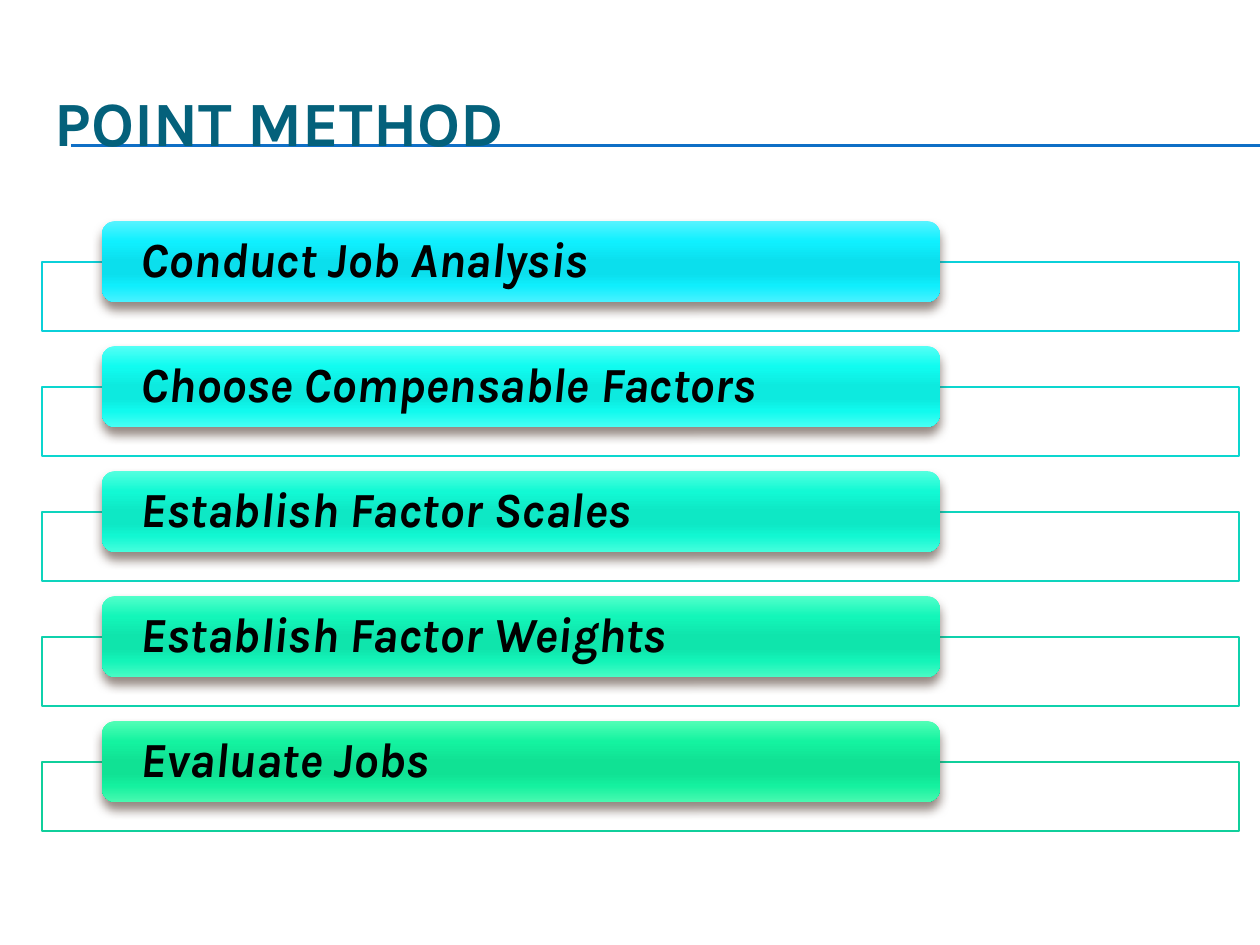
from lxml import etree
from pptx import Presentation, util as u
from pptx.dml.color import RGBColor
from pptx.enum import shapes, text
from pptx.oxml import parse_xml
from pptx.oxml.ns import nsdecls, qn


def px(*nums):
    return [u.Emu(round(n * 914400 / 126)) for n in nums]


def hue(code):
    return RGBColor.from_string(code)


prs = Presentation()
prs.slide_width, prs.slide_height = px(1260, 945)
slide = prs.slides.add_slide(prs.slide_layouts[5])
items = slide.shapes

# Double rule under the title
for y in (145, 146):
    rule = items.add_connector(shapes.MSO_CONNECTOR.STRAIGHT, *px(71, y, 1260, y))
    rule.line.color.rgb = hue("0F6FC6")
    rule.line.width = u.Pt(0.75)
    etree.SubElement(rule._element.spPr, qn("a:effectLst"))

# Title, in front of the rule
title = items.title
title.left, title.top, title.width, title.height = px(42, 63, 1197, 116)
title.text_frame.text = "POINT METHOD"
title.text_frame.vertical_anchor = text.MSO_ANCHOR.MIDDLE
para = title.text_frame.paragraphs[0]
para.alignment = text.PP_ALIGN.LEFT
for key, val in {"name": "Karla", "size": u.Pt(36), "bold": True}.items():
    setattr(para.font, key, val)
para.font.color.rgb = hue("04617B")
items._spTree.append(title._element)

# Steps: label, frame colour, colours of the bar's gradient
stops = (0, 25, 50, 65, 80, 100)
steps = [
    ("Conduct Job Analysis", "0BD0D9", "57F3FF 0FF0FF 0BDFED 0BDFED 0FEEFD 49F2FF"),
    ("Choose Compensable Factors", "0CD6CF", "55FFF5 10FCF0 0DEADF 0DEADF 10FAEE 47FFF4"),
    ("Establish Factor Scales", "0ED4BD", "54FFDF 12F9D4 0EE8C5 0EE8C5 11F7D2 46FEDD"),
    ("Establish Factor Weights", "0FD1AC", "52FFCA 13F6B9 0FE5AC 0FE5AC 13F4B8 48FBC5"),
    ("Evaluate Jobs", "10CF9B", "52FEB6 14F3A0 10E294 10E294 14F19F 49F9B0"),
]
style = {"name": "Karla", "size": u.Pt(28), "bold": True, "italic": True}

for row, (label, edge, shades) in enumerate(steps):
    top = 221 + 125 * row

    # Outlined frame behind the bar
    frame = items.add_shape(shapes.MSO_SHAPE.RECTANGLE, *px(42, top + 41, 1197, 69))
    frame.shadow.inherit = False
    frame.fill.solid()
    frame.fill.fore_color.rgb = hue("FFFFFF")
    frame.line.color.rgb = hue(edge)
    frame.line.width = u.Pt(0.79)

    # Glossy bar with a soft shadow
    bar = items.add_shape(shapes.MSO_SHAPE.ROUNDED_RECTANGLE, *px(102, top, 838, 81))
    bar.line.fill.background()
    marks = "".join(
        f'<a:gs pos="{pos * 1000}"><a:srgbClr val="{shade}"/></a:gs>'
        for pos, shade in zip(stops, shades.split()))
    props = bar._element.spPr
    props.find(qn("a:prstGeom")).addnext(parse_xml(
        f'<a:gradFill {nsdecls("a")} rotWithShape="1"><a:gsLst>{marks}</a:gsLst>'
        '<a:lin ang="5400000" scaled="0"/></a:gradFill>'))
    props.append(parse_xml(
        f'<a:effectLst {nsdecls("a")}><a:outerShdw blurRad="{u.Pt(6)}" dist="{u.Pt(4)}" '
        'dir="5400000" rotWithShape="0"><a:srgbClr val="4E3B30"><a:alpha val="60000"/>'
        '</a:srgbClr></a:outerShdw></a:effectLst>'))

    # Label inside the bar
    body = bar.text_frame
    body.text = label
    body.word_wrap = True
    body.vertical_anchor = text.MSO_ANCHOR.MIDDLE
    body.margin_left, body.margin_right, body.margin_top, body.margin_bottom = px(35, 35, 0, 0)
    para = body.paragraphs[0]
    para.alignment = text.PP_ALIGN.LEFT
    para.line_spacing = 0.9
    for key, val in style.items():
        setattr(para.font, key, val)
    para.font.color.rgb = hue("000000")

prs.save("out.pptx")
